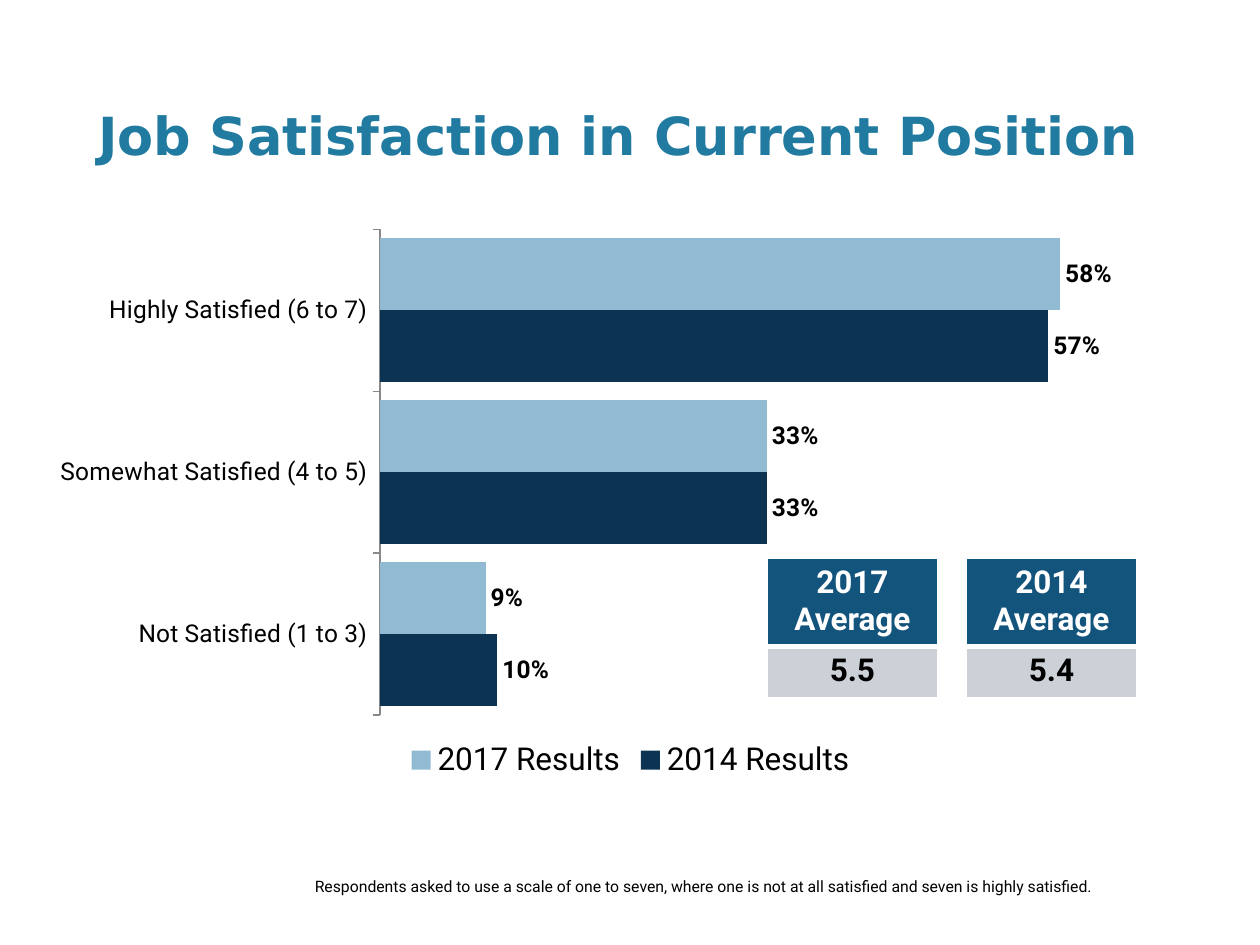
from dataclasses import dataclass

from lxml.etree import SubElement
from pptx import Presentation
from pptx.chart.data import CategoryChartData
from pptx.dml.color import RGBColor
from pptx.enum.chart import XL_CHART_TYPE, XL_LABEL_POSITION, XL_LEGEND_POSITION, XL_TICK_MARK
from pptx.enum.text import MSO_ANCHOR, PP_ALIGN
from pptx.oxml import parse_xml
from pptx.oxml.ns import nsdecls, qn
from pptx.util import Inches, Pt

BODY_FONT = "Roboto"
TITLE_FONT = "DejaVu Sans"
BLACK, WHITE = "000000", "FFFFFF"


@dataclass
class Series:
    name: str
    values: tuple[float, ...]
    color: str


@dataclass
class AverageCard:
    left: float
    heading: str
    value: str


CATEGORIES = ("Not Satisfied (1 to 3)", "Somewhat Satisfied (4 to 5)", "Highly Satisfied (6 to 7)")
SERIES = (
    Series("2014 Results", (0.10, 0.33, 0.57), "0C3351"),
    Series("2017 Results", (0.09, 0.33, 0.58), "91BAD3"),
)
AVERAGES = (AverageCard(6.09, "2017 Average", "5.5"), AverageCard(7.67, "2014 Average", "5.4"))


def rgb(color: str) -> RGBColor:
    return RGBColor.from_string(color)


def set_font(font, size: float, color: str = BLACK, bold: bool = False, name: str = BODY_FONT) -> None:
    font.name, font.size, font.bold = name, Pt(size), bold
    font.color.rgb = rgb(color)


def add_text(slide, left: float, top: float, width: float, height: float, text: str):
    frame = slide.shapes.add_textbox(*map(Inches, (left, top, width, height))).text_frame
    frame.word_wrap = True
    frame.text = text
    return frame


def add_satisfaction_chart(slide) -> None:
    data = CategoryChartData(number_format="0%")
    data.categories = CATEGORIES
    for series in SERIES:
        data.add_series(series.name, series.values)
    area = map(Inches, (0.29, 1.73, 9.43, 4.5))
    chart = slide.shapes.add_chart(XL_CHART_TYPE.BAR_CLUSTERED, *area, data).chart
    set_font(chart.font, 18)
    chart.has_title = False

    # Legend
    chart.has_legend = True
    chart.legend.position = XL_LEGEND_POSITION.BOTTOM
    chart.legend.include_in_layout = False
    set_font(chart.legend.font, 18)

    # Axes
    category_axis, value_axis = chart.category_axis, chart.value_axis
    category_axis.major_tick_mark = XL_TICK_MARK.OUTSIDE
    category_axis.format.line.color.rgb = rgb("888888")
    category_axis.format.line.width = Pt(0.75)
    set_font(category_axis.tick_labels.font, 14)
    value_axis.minimum_scale, value_axis.maximum_scale = 0, 0.7
    value_axis.has_major_gridlines = False
    value_axis.visible = False

    # Bars and labels
    plot = chart.plots[0]
    plot.gap_width, plot.overlap = 25, 0
    plot.vary_by_categories = False
    for bars, series in zip(plot.series, SERIES):
        bars.format.fill.solid()
        bars.format.fill.fore_color.rgb = rgb(series.color)
        labels = bars.data_labels
        labels.show_value = True
        labels.number_format, labels.number_format_is_linked = "0%", False
        labels.position = XL_LABEL_POSITION.OUTSIDE_END
        set_font(labels.font, 14, bold=True)


def set_borders(cell, top: float, bottom: float) -> None:
    properties = cell._tc.get_or_add_tcPr()
    sides = {"lnL": 1, "lnR": 1, "lnT": top, "lnB": bottom}
    for index, (side, width) in enumerate(sides.items()):
        line = parse_xml(f'<a:{side} {nsdecls("a")} w="{Pt(width)}"/>')
        fill = SubElement(line, qn("a:solidFill"))
        SubElement(fill, qn("a:srgbClr"), val=WHITE)
        properties.insert(index, line)


def fill_cell(cell, text: str, fill: str, color: str, top: float, bottom: float) -> None:
    cell.text = text
    cell.fill.solid()
    cell.fill.fore_color.rgb = rgb(fill)
    paragraph = cell.text_frame.paragraphs[0]
    paragraph.alignment = PP_ALIGN.CENTER
    set_font(paragraph.font, 18, color, bold=True)
    set_borders(cell, top, bottom)


def add_average_card(slide, card: AverageCard) -> None:
    area = map(Inches, (card.left, 4.43, 1.35, 1.11))
    table = slide.shapes.add_table(2, 1, *area).table
    table.rows[0].height, table.rows[1].height = Inches(0.7), Inches(0.41)
    fill_cell(table.cell(0, 0), card.heading, "13547D", WHITE, top=1, bottom=3)
    fill_cell(table.cell(1, 0), card.value, "CCD1D7", BLACK, top=3, bottom=1)


def main() -> None:
    presentation = Presentation()
    presentation.slide_width, presentation.slide_height = Inches(10), Inches(7.5)
    slide = presentation.slides.add_slide(presentation.slide_layouts[6])

    # Title
    title = add_text(slide, 0.78, 0.63, 9.07, 0.88, "Job Satisfaction in Current Position")
    title.margin_left = 0
    title.vertical_anchor = MSO_ANCHOR.MIDDLE
    set_font(title.paragraphs[0].font, 30, "217AA0", bold=True, name=TITLE_FONT)

    # Results and averages
    add_satisfaction_chart(slide)
    for card in AVERAGES:
        add_average_card(slide, card)

    # Footnote
    footnote = add_text(
        slide, 2.4, 6.91, 8.85, 0.25,
        "Respondents asked to use a scale of one to seven, where one is not at all satisfied "
        "and seven is highly satisfied.",
    )
    set_font(footnote.paragraphs[0].font, 9)

    presentation.save("out.pptx")


if __name__ == "__main__":
    main()
